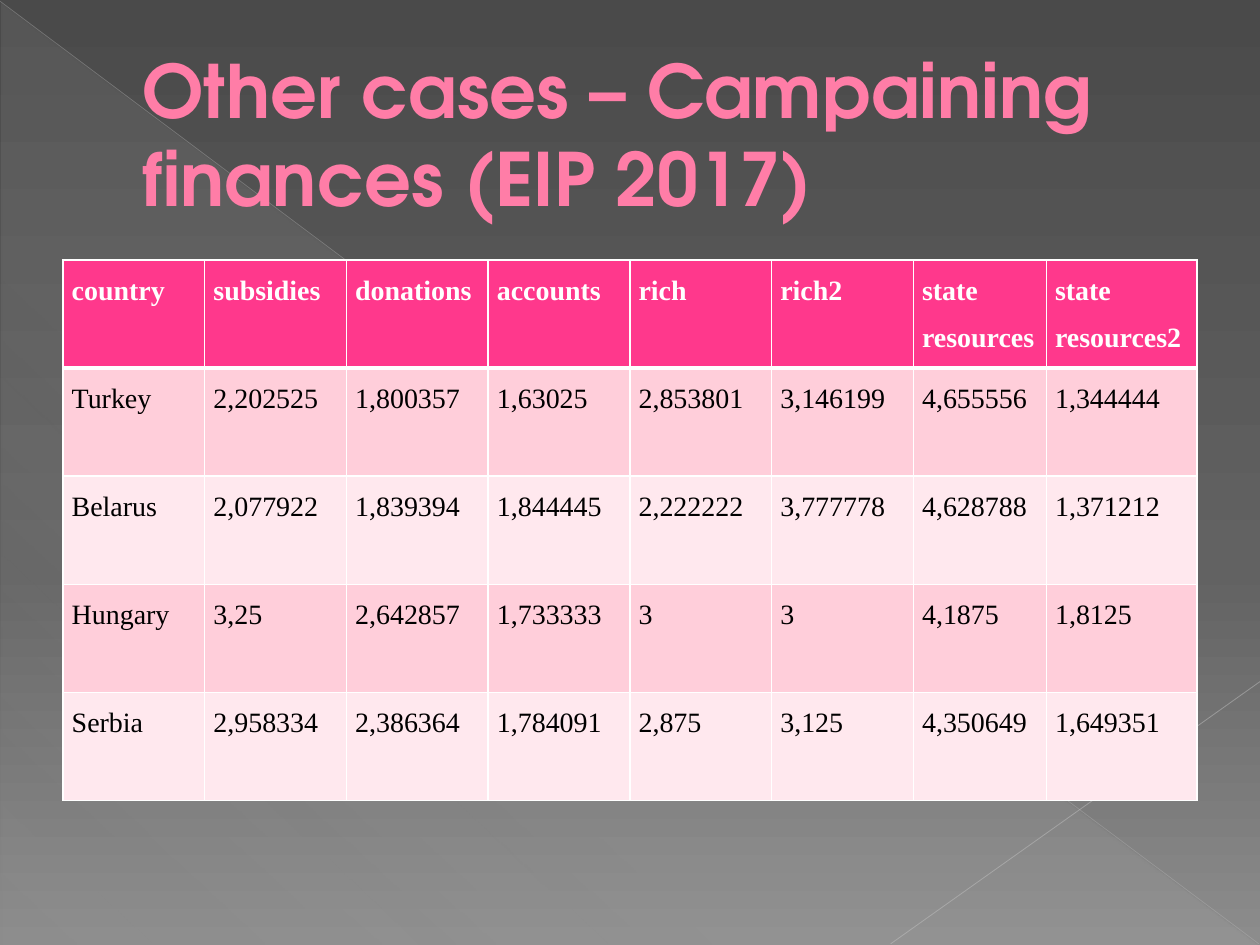
from dataclasses import dataclass

from lxml import etree
from pptx import Presentation
from pptx.dml.color import RGBColor
from pptx.enum.shapes import MSO_CONNECTOR, MSO_SHAPE
from pptx.enum.text import MSO_ANCHOR, MSO_AUTO_SIZE, PP_ALIGN
from pptx.oxml.ns import qn
from pptx.util import Pt

STRAIGHT = MSO_CONNECTOR.STRAIGHT
RIGHT_TRIANGLE = MSO_SHAPE.RIGHT_TRIANGLE
MIDDLE = MSO_ANCHOR.MIDDLE
NO_AUTOFIT = MSO_AUTO_SIZE.NONE
LEFT = PP_ALIGN.LEFT
JUSTIFY = PP_ALIGN.JUSTIFY

TITLE_FONT = "TeX Gyre Adventor"
TABLE_FONT = "Times New Roman"
WHITE = "FFFFFF"
BLACK = "000000"
HEADER_FILL = "FF388C"
BAND_FILLS = ("FFCEDA", "FFE8EE")
COLUMN_WIDTHS = (81,) * 6 + (76, 86)
ROW_HEIGHT = 61.8
ROWS = (
    ("country", "subsidies", "donations", "accounts", "rich", "rich2",
     "state resources", "state resources2"),
    ("Turkey", "2,202525", "1,800357", "1,63025", "2,853801", "3,146199",
     "4,655556", "1,344444"),
    ("Belarus", "2,077922", "1,839394", "1,844445", "2,222222", "3,777778",
     "4,628788", "1,371212"),
    ("Hungary", "3,25", "2,642857", "1,733333", "3", "3", "4,1875", "1,8125"),
    ("Serbia", "2,958334", "2,386364", "1,784091", "2,875", "3,125",
     "4,350649", "1,649351"),
)


@dataclass(frozen=True)
class Stop:
    position: int
    color: str
    opacity: int = 100


@dataclass(frozen=True)
class Ray:
    start: tuple[float, float]
    end: tuple[float, float]
    color: str
    width: float
    opacity: int


BACKGROUND_STOPS = (Stop(0, "4A4A4A"), Stop(60, "626262"), Stop(100, "8C8C8C"))
TRIANGLE_STOPS = (Stop(0, "D2D2D2", 10), Stop(70, "D2D2D2", 8), Stop(100, "D2D2D2", 1))
RAYS = (
    Ray((0, 0.7), (719.3, 539.3), "BFBFBF", 0.39, 35),
    Ray((720, 389.5), (509, 539.3), "C6C6C6", 0.47, 45),
)


def rgb(value: str) -> RGBColor:
    return RGBColor.from_string(value)


def add_color(parent, value: str, opacity: int = 100) -> None:
    color = etree.SubElement(parent, qn("a:srgbClr"), val=value)
    if opacity < 100:
        etree.SubElement(color, qn("a:alpha"), val=str(opacity * 1000))


def add_solid_fill(parent, value: str, opacity: int = 100) -> None:
    add_color(etree.SubElement(parent, qn("a:solidFill")), value, opacity)


def set_gradient(fill, owner, stops: tuple[Stop, ...], angle: int) -> None:
    fill.gradient()
    gradient = owner.find(".//" + qn("a:gradFill"))
    for child in list(gradient):
        gradient.remove(child)
    stop_list = etree.SubElement(gradient, qn("a:gsLst"))
    for stop in stops:
        node = etree.SubElement(stop_list, qn("a:gs"), pos=str(stop.position * 1000))
        add_color(node, stop.color, stop.opacity)
    etree.SubElement(gradient, qn("a:lin"), ang=str(angle * 60000), scaled="0")


def add_triangle(page) -> None:
    triangle = page.shapes.add_shape(RIGHT_TRIANGLE, Pt(0.7), Pt(1.4), Pt(718.6), Pt(538.6))
    triangle.shadow.inherit = False
    triangle.line.fill.background()
    set_gradient(triangle.fill, triangle.element.spPr, TRIANGLE_STOPS, 133)


def add_ray(page, ray: Ray) -> None:
    connector = page.shapes.add_connector(
        STRAIGHT, *(Pt(value) for value in ray.start + ray.end))
    connector.line.width = Pt(ray.width)
    add_solid_fill(connector.line._get_or_add_ln(), ray.color, ray.opacity)
    etree.SubElement(connector.element.spPr, qn("a:effectLst"))


def add_span(para, text: str, font: str, size: float, color: str, bold: bool):
    span = para.add_run()
    span.text = text
    span.font.name = font
    span.font.size = Pt(size)
    span.font.color.rgb = rgb(color)
    span.font.bold = bold
    return span


def place_title(page) -> None:
    title = page.shapes.title
    title.left, title.top, title.width, title.height = Pt(36), Pt(21), Pt(648), Pt(110)
    title.element.getparent().append(title.element)
    frame = title.text_frame
    frame.word_wrap = True
    frame.auto_size = NO_AUTOFIT
    frame.vertical_anchor = MIDDLE
    para = frame.paragraphs[0]
    para.alignment = LEFT
    properties = para._p.get_or_add_pPr()
    properties.set("marL", str(Pt(38)))
    properties.set("indent", "0")
    span = add_span(para, "Other cases – Campaining finances (EIP 2017)",
                    TITLE_FONT, 42, "FF7DA7", True)
    outline = etree.Element(qn("a:ln"), w=str(Pt(0.5)))
    add_solid_fill(outline, "B12761")
    span.font._element.insert(0, outline)


def set_borders(cell, top: float, bottom: float) -> None:
    properties = cell._tc.get_or_add_tcPr()
    widths = {"a:lnL": 1, "a:lnR": 1, "a:lnT": top, "a:lnB": bottom}
    for index, (tag, width) in enumerate(widths.items()):
        border = etree.Element(qn(tag), w=str(Pt(width)))
        add_solid_fill(border, WHITE)
        properties.insert(index, border)


def fill_cell(cell, text: str, row: int) -> None:
    header = row == 0
    cell.margin_left = cell.margin_right = Pt(5)
    cell.margin_top = cell.margin_bottom = Pt(0)
    cell.fill.solid()
    cell.fill.fore_color.rgb = rgb(HEADER_FILL if header else BAND_FILLS[(row - 1) % 2])
    para = cell.text_frame.paragraphs[0]
    para.alignment = JUSTIFY
    para.line_spacing = 1.5
    add_span(para, text, TABLE_FONT, 16, WHITE if header else BLACK, header)
    set_borders(cell, top=3 if row == 1 else 1, bottom=3 if header else 1)


def add_finance_table(page) -> None:
    table = page.shapes.add_table(
        len(ROWS), len(COLUMN_WIDTHS), Pt(36), Pt(148.5),
        Pt(sum(COLUMN_WIDTHS)), Pt(ROW_HEIGHT * len(ROWS))).table
    for column, width in zip(table.columns, COLUMN_WIDTHS):
        column.width = Pt(width)
    for row, texts in enumerate(ROWS):
        table.rows[row].height = Pt(ROW_HEIGHT)
        for column, text in enumerate(texts):
            fill_cell(table.cell(row, column), text, row)


def main() -> None:
    deck = Presentation()
    deck.slide_width, deck.slide_height = Pt(720), Pt(540)
    page = deck.slides.add_slide(deck.slide_layouts[5])
    set_gradient(page.background.fill, page.element, BACKGROUND_STOPS, 90)
    add_triangle(page)
    for ray in RAYS:
        add_ray(page, ray)
    place_title(page)
    add_finance_table(page)
    deck.save("out.pptx")


if __name__ == "__main__":
    main()
